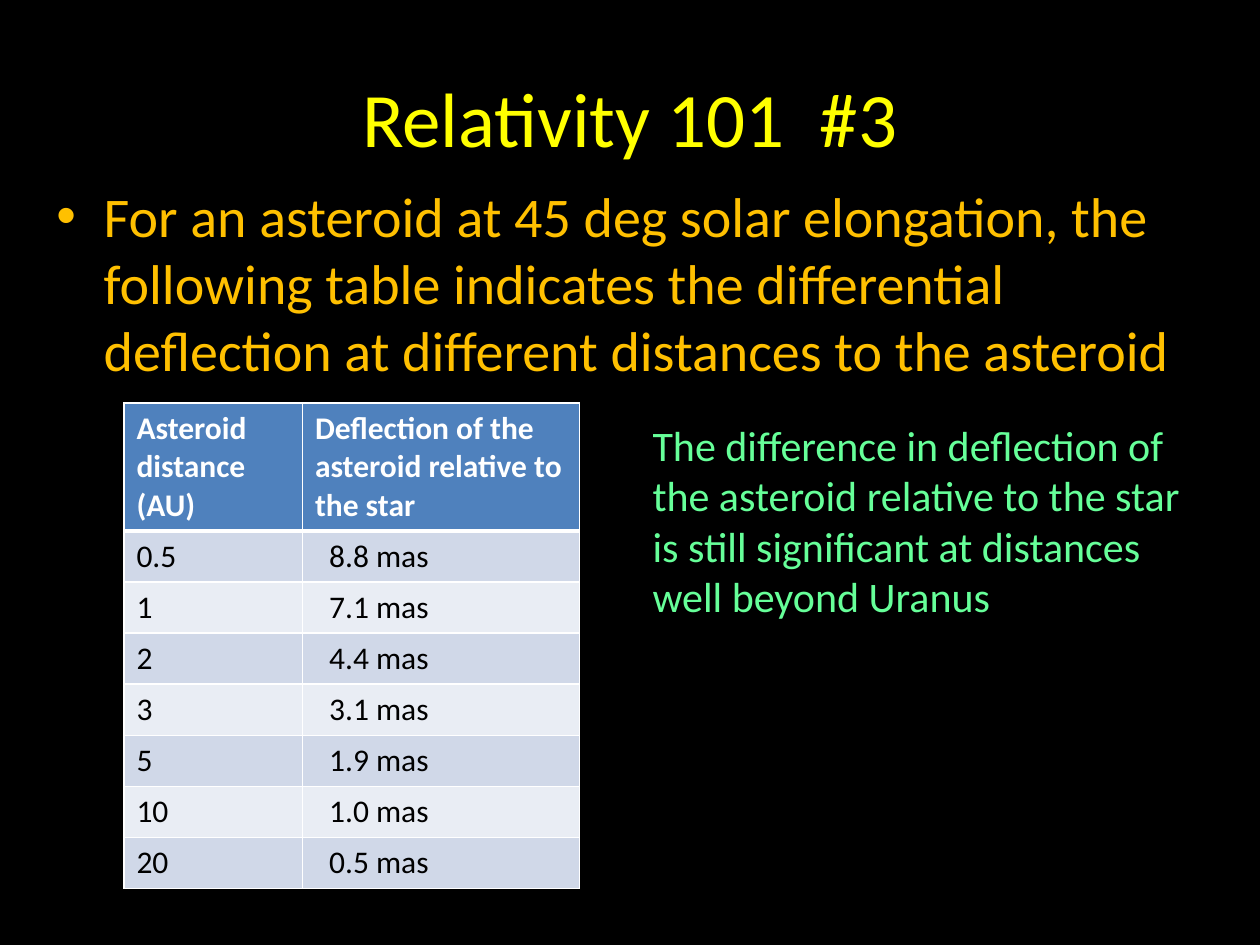
from pptx import Presentation
from pptx.dml.color import RGBColor
from pptx.enum import text
from pptx.oxml import parse_xml
from pptx.oxml import ns
from pptx.util import Pt

BLACK = RGBColor(0, 0, 0)
WHITE = RGBColor(255, 255, 255)
YELLOW = RGBColor(255, 255, 0)
GOLD = RGBColor(0xFF, 0xC0, 0)
GREEN = RGBColor(0x66, 0xFF, 0x99)
BLUE = RGBColor(0x4F, 0x81, 0xBD)
BANDS = (RGBColor(0xD0, 0xD8, 0xE8), RGBColor(0xE9, 0xED, 0xF4))

HEADS = (("Asteroid distance", "(AU)"),
         ("Deflection of the asteroid relative to the star",))
ROWS = (("0.5", "8.8 mas"), ("1", "7.1 mas"), ("2", "4.4 mas"),
        ("3", "3.1 mas"), ("5", "1.9 mas"), ("10", "1.0 mas"),
        ("20", "0.5 mas"))


def add_run(para, words, size, color, bold=False):
    run = para.add_run()
    run.text = words
    font = run.font
    font.name = "Calibri"
    font.size = Pt(size)
    font.bold = bold
    font.color.rgb = color


def add_title(slide, words):
    title = slide.shapes.title
    title.left, title.top, title.width, title.height = map(Pt, (36, 21.6, 648, 90))
    frame = title.text_frame
    frame.vertical_anchor = text.MSO_ANCHOR.MIDDLE
    para = frame.paragraphs[0]
    para.alignment = text.PP_ALIGN.CENTER
    add_run(para, words, 44, YELLOW)


def add_text(slide, box, words, size, color):
    frame = slide.shapes.add_textbox(*map(Pt, box)).text_frame
    frame.word_wrap = True
    para = frame.paragraphs[0]
    add_run(para, words, size, color)
    return para


def add_bullet(para):
    para.space_before = Pt(6.4)
    props = para._p.get_or_add_pPr()
    props.set("marL", str(Pt(27)))
    props.set("indent", str(-Pt(27)))
    for tag in ('buFont {} typeface="Arial"', 'buChar {} char="•"'):
        props.append(parse_xml("<a:" + tag.format(ns.nsdecls("a")) + "/>"))


def set_edges(cell, foot):
    props = cell._tc.get_or_add_tcPr()
    widths = {"lnL": 1, "lnR": 1, "lnT": 1, "lnB": foot}
    for i, (tag, width) in enumerate(widths.items()):
        props.insert(i, parse_xml(
            f'<a:{tag} {ns.nsdecls("a")} w="{Pt(width)}"><a:solidFill>'
            f'<a:srgbClr val="{WHITE}"/></a:solidFill></a:{tag}>'))


def fill_cell(cell, lines, fill, color, bold=False, foot=1):
    cell.fill.solid()
    cell.fill.fore_color.rgb = fill
    set_edges(cell, foot)
    frame = cell.text_frame
    for i, line in enumerate(lines):
        para = frame.add_paragraph() if i else frame.paragraphs[0]
        add_run(para, line, 18, color, bold)


def add_grid(slide):
    head, row = 73, 29.2
    count = len(ROWS)
    grid = slide.shapes.add_table(
        count + 1, 2, Pt(70.8), Pt(230.4), Pt(260.4), Pt(head + count * row)).table
    for col, width in zip(grid.columns, (102, 158.4)):
        col.width = Pt(width)
    for line, height in zip(grid.rows, [head] + [row] * count):
        line.height = Pt(height)
    for c, lines in enumerate(HEADS):
        fill_cell(grid.cell(0, c), lines, BLUE, WHITE, True, 3)
    for r, pair in enumerate(ROWS):
        for c, words in enumerate(pair):
            fill_cell(grid.cell(r + 1, c), [words], BANDS[r % 2], BLACK)
        grid.cell(r + 1, 1).margin_left = Pt(15.3)
        if r == 0:
            for c in range(2):
                edge = grid.cell(1, c)._tc.tcPr.find(ns.qn("a:lnT"))
                edge.set("w", str(Pt(3)))


def main():
    deck = Presentation()
    deck.slide_width, deck.slide_height = Pt(720), Pt(540)
    slide = deck.slides.add_slide(deck.slide_layouts[5])
    back = slide.background.fill
    back.solid()
    back.fore_color.rgb = BLACK
    add_title(slide, "Relativity 101  #3")
    add_bullet(add_text(
        slide, (25.2, 100, 659.5, 356.4),
        "For an asteroid at 45 deg solar elongation, the following table "
        "indicates the differential deflection at different distances to "
        "the asteroid", 32, GOLD))
    add_grid(slide)
    add_text(
        slide, (365.8, 236.2, 329, 123.8),
        "The difference in deflection of the asteroid relative to the star "
        "is still significant at distances well beyond Uranus", 24, GREEN)
    deck.save("out.pptx")


if __name__ == "__main__":
    main()
